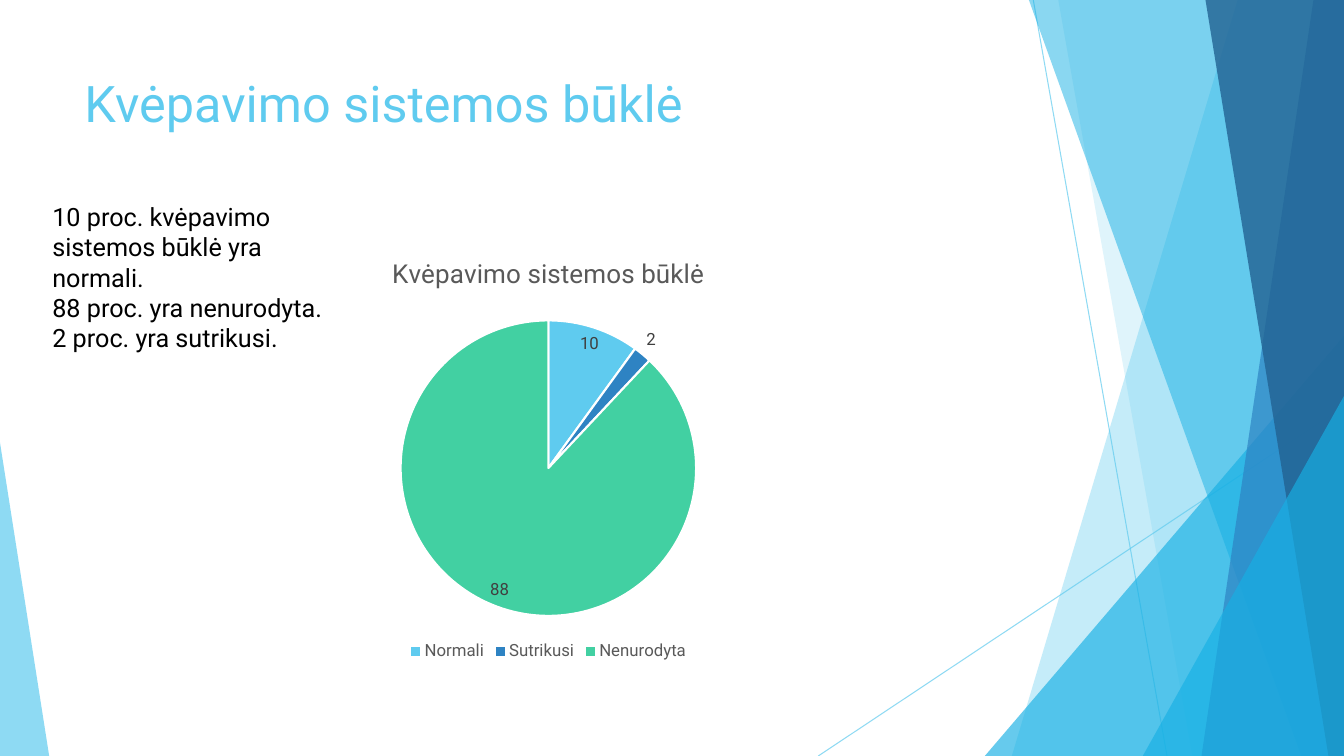
from lxml.etree import SubElement
from pptx import Presentation
from pptx.chart.data import CategoryChartData
from pptx.dml.color import RGBColor
from pptx.enum.chart import XL_CHART_TYPE, XL_LABEL_POSITION, XL_LEGEND_POSITION
from pptx.enum.shapes import MSO_CONNECTOR, MSO_SHAPE
from pptx.enum.text import MSO_ANCHOR
from pptx.oxml.ns import qn
from pptx.util import Cm, Pt

SKY = RGBColor(0x5F, 0xCB, 0xEF)
CYAN = RGBColor(0x17, 0xB0, 0xE4)
BLUE = RGBColor(0x2E, 0x83, 0xC3)
NAVY = RGBColor(0x22, 0x62, 0x92)
GREEN = RGBColor(0x42, 0xD0, 0xA2)
WHITE = RGBColor(0xFF, 0xFF, 0xFF)
BLACK = RGBColor(0, 0, 0)
GREY = RGBColor(0x59, 0x59, 0x59)
DARK_GREY = RGBColor(0x40, 0x40, 0x40)

WIDTH, HEIGHT = 33.87, 19.05
HEADING = "Kvėpavimo sistemos būklė"


class SlideBuilder:
    font_name = "Roboto"

    def __init__(self, slide):
        self.slide = slide
        self.shapes = slide.shapes

    def style_font(self, font, size, color):
        values = {"name": self.font_name, "size": Pt(size), "bold": False}
        for attribute, value in values.items():
            setattr(font, attribute, value)
        font.color.rgb = color

    def paint(self, fill, color, opacity):
        fill.solid()
        fill.fore_color.rgb = color
        tint = fill._xPr.find(qn("a:solidFill"))[0]
        SubElement(tint, qn("a:alpha"), val=str(opacity * 1000))

    def finish(self, shape, color, opacity):
        shape.shadow.inherit = False
        shape.line.fill.background()
        self.paint(shape.fill, color, opacity)

    def ray(self, start, end):
        ends = [Cm(value) for value in (*start, *end)]
        ray = self.shapes.add_connector(MSO_CONNECTOR.STRAIGHT, *ends)
        ray.line.width = Pt(0.75)
        self.paint(ray.line.fill, SKY, 70)
        SubElement(ray._element.spPr, qn("a:effectLst"))

    def band(self, top_x, bottom_x, color, opacity):
        """Fill from a slanted left edge to the right side of the slide."""
        corners = [(WIDTH, 0), (WIDTH, HEIGHT), (bottom_x, HEIGHT)]
        builder = self.shapes.build_freeform(Cm(top_x), 0)
        builder.add_line_segments([(Cm(x), Cm(y)) for x, y in corners])
        self.finish(builder.convert_to_shape(), color, opacity)

    def corner(self, left, top, width, apex, color, opacity):
        """Triangle standing on the bottom edge of the slide."""
        box = [Cm(value) for value in (left, top, width, HEIGHT - top)]
        triangle = self.shapes.add_shape(MSO_SHAPE.ISOSCELES_TRIANGLE, *box)
        triangle.adjustments[0] = apex
        self.finish(triangle, color, opacity)

    def text(self, box, lines, size, color):
        frame = self.shapes.add_textbox(*map(Cm, box)).text_frame
        for attribute, value in {"word_wrap": True, "vertical_anchor": MSO_ANCHOR.TOP}.items():
            setattr(frame, attribute, value)
        frame.text = "\n".join(lines)
        for paragraph in frame.paragraphs:
            self.style_font(paragraph.runs[0].font, size, color)

    def pie(self, box, title, slices):
        data = CategoryChartData()
        data.categories = [name for name, _, _ in slices]
        data.add_series(title, [value for _, value, _ in slices])
        chart = self.shapes.add_chart(XL_CHART_TYPE.PIE, *map(Cm, box), data).chart
        self.style_font(chart.font, 10, BLACK)

        # Chart title and legend
        chart.has_title = True
        heading = chart.chart_title.text_frame
        heading.text = title
        self.style_font(heading.paragraphs[0].runs[0].font, 18.6, GREY)
        chart.has_legend = True
        for attribute, value in {"position": XL_LEGEND_POSITION.BOTTOM, "include_in_layout": False}.items():
            setattr(chart.legend, attribute, value)
        self.style_font(chart.legend.font, 12, GREY)

        # Slices and their labels
        plot = chart.plots[0]
        plot.vary_by_categories = True
        for index, (_, _, color) in enumerate(slices):
            look = plot.series[0].points[index].format
            look.fill.solid()
            look.fill.fore_color.rgb = color
            look.line.color.rgb = WHITE
            look.line.width = Pt(1.5)
        labels = plot.series[0].data_labels
        for attribute, value in {"show_value": True, "position": XL_LABEL_POSITION.BEST_FIT}.items():
            setattr(labels, attribute, value)
        self.style_font(labels.font, 12, DARK_GREY)


def main():
    deck = Presentation()
    deck.slide_width, deck.slide_height = Cm(WIDTH), Cm(HEIGHT)
    page = SlideBuilder(deck.slides.add_slide(deck.slide_layouts[6]))

    # Backdrop of rays, bands and corners
    page.ray((26.04, 0), (29.41, HEIGHT))
    page.ray((WIDTH, 10.24), (20.62, HEIGHT))
    page.band(31.19, 25.5, SKY, 36)
    page.band(26.67, 30.05, SKY, 20)
    page.corner(24.82, 8.46, 9.05, 1, CYAN, 66)
    page.band(25.93, 32.79, CYAN, 50)
    page.band(33.1, 30.28, BLUE, 70)
    page.band(30.38, 33.48, NAVY, 80)
    page.corner(28.8, 9.98, 5.07, 1, CYAN, 66)
    page.corner(0, 11.15, 1.24, 0, SKY, 70)

    # Heading, chart and findings
    page.text((1.88, 1.7, 23.88, 3.66), [HEADING], 36, SKY)
    page.pie((1.88, 5.99, 23.88, 10.77), HEADING, [
        ("Normali", 10, SKY),
        ("Sutrikusi", 2, BLUE),
        ("Nenurodyta", 88, GREEN),
    ])
    page.text((1.07, 4.95, 7.62, 4.88), [
        "10 proc. kvėpavimo sistemos būklė yra normali.",
        "88 proc. yra nenurodyta.",
        "2 proc. yra sutrikusi.",
    ], 18, BLACK)

    deck.save("out.pptx")


if __name__ == "__main__":
    main()
